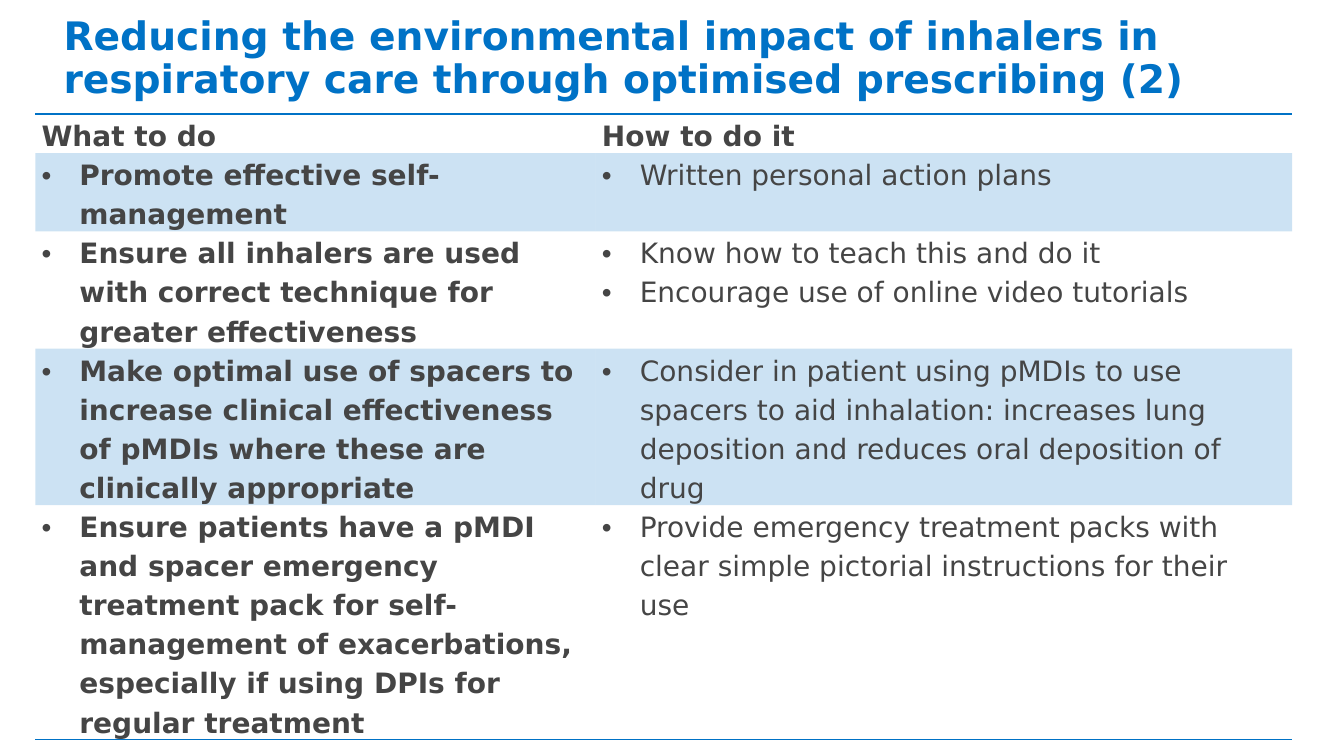
from dataclasses import dataclass

from lxml import etree
from pptx import Presentation
from pptx import util as u
from pptx.dml.color import RGBColor
from pptx.enum import text
from pptx.oxml import ns

COLOURS = {"blue": "0072C6", "grey": "454545"}
FONT = "DejaVu Sans"
LINE_HEIGHT = 27.86
COLUMN_WIDTHS = (400.3, 497.5)


@dataclass(frozen=True)
class Advice:
    what: str
    how: tuple[str, ...]
    lines: int
    bulleted: bool = True
    shaded: bool = False
    ruled_above: bool = False
    ruled_below: bool = False


ADVICE = (
    Advice("What to do", ("How to do it",), 1,
           bulleted=False, ruled_above=True, ruled_below=True),
    Advice("Promote effective self-management",
           ("Written personal action plans",), 2, shaded=True),
    Advice("Ensure all inhalers are used with correct technique for greater effectiveness",
           ("Know how to teach this and do it",
            "Encourage use of online video tutorials"), 3),
    Advice("Make optimal use of spacers to increase clinical effectiveness of pMDIs "
           "where these are clinically appropriate",
           ("Consider in patient using pMDIs to use spacers to aid inhalation: increases "
            "lung deposition and reduces oral deposition of drug",), 4, shaded=True),
    Advice("Ensure patients have a pMDI and spacer emergency treatment pack for "
           "self-management of exacerbations, especially if using DPIs for regular treatment",
           ("Provide emergency treatment packs with clear simple pictorial "
            "instructions for their use",), 6, ruled_below=True),
)


def set_font(paragraph, size: float, colour: str, bold: bool) -> None:
    font = paragraph.font
    font.name, font.size, font.bold = FONT, u.Pt(size), bold
    font.color.rgb = RGBColor.from_string(COLOURS[colour])


def add_bullet(paragraph) -> None:
    properties = paragraph._p.get_or_add_pPr()
    properties.set("marL", str(u.Pt(27)))
    properties.set("indent", str(u.Pt(-27)))
    etree.SubElement(properties, ns.qn("a:buFont"), typeface="Arial")
    etree.SubElement(properties, ns.qn("a:buChar"), char="•")


def set_fill(cell, shaded: bool) -> None:
    if not shaded:
        cell.fill.background()
        return
    cell.fill.solid()
    cell.fill.fore_color.rgb = RGBColor.from_string(COLOURS["blue"])
    tint = cell._tc.tcPr.find(".//" + ns.qn("a:srgbClr"))
    etree.SubElement(tint, ns.qn("a:alpha"), val="20000")


def set_borders(cell, above: bool, below: bool) -> None:
    sides = (("a:lnL", False), ("a:lnR", False), ("a:lnT", above), ("a:lnB", below))
    for position, (side, ruled) in enumerate(sides):
        border = etree.Element(ns.qn(side), w=str(u.Pt(1)))
        if ruled:
            fill = etree.SubElement(border, ns.qn("a:solidFill"))
            etree.SubElement(fill, ns.qn("a:srgbClr"), val=COLOURS["blue"])
        else:
            etree.SubElement(border, ns.qn("a:noFill"))
        cell._tc.tcPr.insert(position, border)


def fill_cell(cell, points: tuple[str, ...], bold: bool, advice: Advice) -> None:
    cell.margin_left = cell.margin_right = u.Pt(4.5)
    cell.margin_top = cell.margin_bottom = u.Pt(0)
    frame = cell.text_frame
    for index, point in enumerate(points):
        paragraph = frame.add_paragraph() if index else frame.paragraphs[0]
        paragraph.text = point
        if advice.bulleted:
            add_bullet(paragraph)
        paragraph.line_spacing = 1.2
        set_font(paragraph, 20, "grey", bold)
    set_fill(cell, advice.shaded)
    set_borders(cell, advice.ruled_above, advice.ruled_below)


def add_heading(slide) -> None:
    heading = slide.shapes.title
    heading.left, heading.top = u.Pt(38.2), u.Pt(22.3)
    heading.width, heading.height = u.Pt(872), u.Pt(40.3)
    frame = heading.text_frame
    frame.text = ("Reducing the environmental impact of inhalers in respiratory care "
                  "through optimised prescribing (2)")
    frame.word_wrap = True
    frame.auto_size = text.MSO_AUTO_SIZE.NONE
    frame.vertical_anchor = text.MSO_ANCHOR.MIDDLE
    paragraph = frame.paragraphs[0]
    paragraph.alignment = text.PP_ALIGN.LEFT
    paragraph.line_spacing = 0.9
    set_font(paragraph, 28, "blue", True)


def add_advice_table(slide) -> None:
    height = LINE_HEIGHT * sum(advice.lines for advice in ADVICE)
    table = slide.shapes.add_table(
        len(ADVICE), len(COLUMN_WIDTHS), u.Pt(25.2), u.Pt(81.4),
        u.Pt(sum(COLUMN_WIDTHS)), u.Pt(height)).table
    table.first_row = table.horz_banding = False
    for column, width in zip(table.columns, COLUMN_WIDTHS):
        column.width = u.Pt(width)
    for index, advice in enumerate(ADVICE):
        table.rows[index].height = u.Pt(LINE_HEIGHT * advice.lines)
        fill_cell(table.cell(index, 0), (advice.what,), True, advice)
        fill_cell(table.cell(index, 1), advice.how, not advice.bulleted, advice)


def main() -> None:
    deck = Presentation()
    deck.slide_width, deck.slide_height = u.Pt(960), u.Pt(540)
    slide = deck.slides.add_slide(deck.slide_layouts[5])
    add_heading(slide)
    add_advice_table(slide)
    deck.save("out.pptx")


if __name__ == "__main__":
    main()
